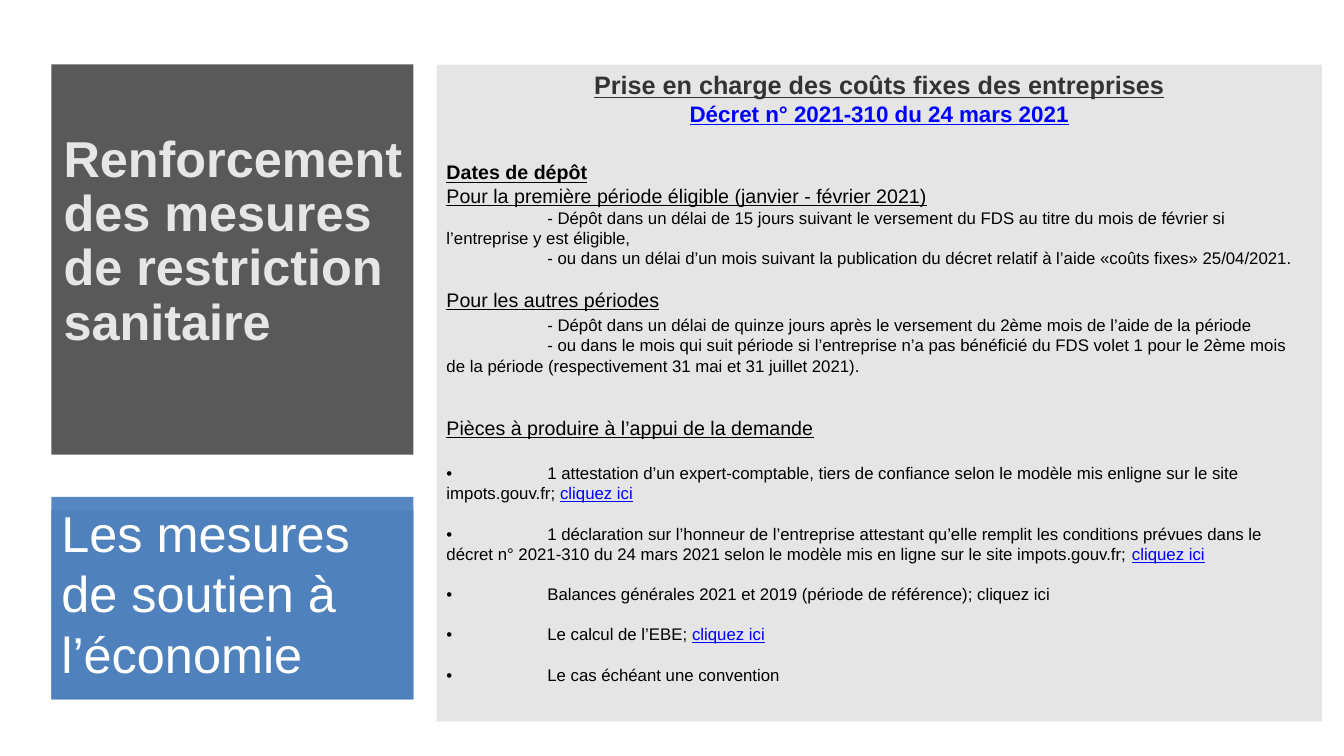
from lxml.etree import SubElement
from pptx import Presentation
from pptx.dml.color import RGBColor
from pptx.enum.shapes import MSO_SHAPE
from pptx.enum.text import MSO_ANCHOR, PP_ALIGN
from pptx.oxml.ns import qn
from pptx.util import Inches, Pt

DARK = RGBColor(0x59, 0x59, 0x59)
PALE = RGBColor(0xE7, 0xE6, 0xE6)
BLUE = RGBColor(0x4F, 0x81, 0xBD)
GREY = RGBColor(0x80, 0x80, 0x80)
WHITE = RGBColor(0xFF, 0xFF, 0xFF)
BLACK = RGBColor(0x00, 0x00, 0x00)
HEADING = RGBColor(0x33, 0x33, 0x33)
LINK = RGBColor(0x00, 0x00, 0xFF)

LEFT_X, LEFT_W = 0.51, 3.59
RIGHT_X, RIGHT_W = 4.33, 8.78
TOP = 0.64
INDENT = Inches(1)

FORMATS = {
    "strong": {"size": Pt(14), "bold": True, "underline": True},
    "head": {"size": Pt(14), "underline": True},
    "dash": {"size": Pt(12)},
    "bullet": {"size": Pt(12)},
}

DETAILS = [
    ("strong", 0, "Dates de dépôt", ""),
    ("head", 0, "Pour la première période éligible (janvier - février 2021)", ""),
    ("dash", 0, "- Dépôt dans un délai de 15 jours suivant le versement du FDS au titre du mois de février si\n"
     "l’entreprise y est éligible,", ""),
    ("dash", 0, "- ou dans un délai d’un mois suivant la publication du décret relatif à l’aide "
     "«coûts fixes» 25/04/2021.", ""),
    ("head", 14.4, "Pour les autres périodes", ""),
    ("dash", 2.4, "- Dépôt dans un délai de quinze jours après le versement du 2ème mois de l’aide de la période", ""),
    ("dash", 0, "- ou dans le mois qui suit période si l’entreprise n’a pas bénéficié du FDS volet 1 pour le 2ème mois\n"
     "de la période (respectivement 31 mai et 31 juillet 2021).", ""),
    ("head", 28.8, "Pièces à produire à l’appui de la demande", ""),
    ("bullet", 16.8, "1 attestation d’un expert-comptable, tiers de confiance selon le modèle mis enligne sur le site\n"
     "impots.gouv.fr; ", "cliquez ici"),
    ("bullet", 14.4, "1 déclaration sur l’honneur de l’entreprise attestant qu’elle remplit les conditions prévues dans le\n"
     "décret n° 2021-310 du 24 mars 2021 selon le modèle mis en ligne sur le site impots.gouv.fr; ", "cliquez ici"),
    ("bullet", 14.4, "Balances générales 2021 et 2019 (période de référence); cliquez ici", ""),
    ("bullet", 14.4, "Le calcul de l’EBE; ", "cliquez ici"),
    ("bullet", 14.4, "Le cas échéant une convention", ""),
]


def add_run(p, text, color, **fmt):
    r = p.add_run()
    r.text = text
    r.font.color.rgb = color
    for name, value in {"name": "Arial", **fmt}.items():
        setattr(r.font, name, value)


def set_frame(tf, anchor=MSO_ANCHOR.TOP, top=0.05, right=0.1):
    values = {"word_wrap": True, "vertical_anchor": anchor,
              "margin_left": Inches(0.1), "margin_right": Inches(right),
              "margin_top": Inches(top), "margin_bottom": Inches(0.05)}
    for name, value in values.items():
        setattr(tf, name, value)


def add_panel(s, box, color, opacity=100):
    sp = s.shapes.add_shape(MSO_SHAPE.RECTANGLE, *map(Inches, box))
    sp.shadow.inherit = False
    sp.fill.solid()
    sp.fill.fore_color.rgb = color
    sp.line.fill.background()
    if opacity < 100:
        clr = sp.fill._xPr.find(qn("a:solidFill"))[0]
        SubElement(clr, qn("a:alpha")).set("val", str(opacity * 1000))
    return sp


def add_title(s, box):
    x, y, w, h = box
    panel = add_panel(s, box, DARK)
    title = s.shapes.title
    panel._element.addnext(title._element)
    place = {"left": x + 0.02, "top": y, "width": w - 0.03, "height": h - 0.34}
    for name, value in place.items():
        setattr(title, name, Inches(value))
    set_frame(title.text_frame, MSO_ANCHOR.MIDDLE, right=0)
    p = title.text_frame.paragraphs[0]
    p.alignment, p.line_spacing = PP_ALIGN.LEFT, 0.9
    add_run(p, "Renforcement des mesures de restriction sanitaire", PALE, size=Pt(36), bold=True)


def add_subject(s, box):
    x, y, w, h = box
    add_panel(s, (x, y + 0.13, w, h - 0.13), BLUE, 95)
    tf = add_panel(s, box, BLUE, 95).text_frame
    set_frame(tf)
    p = tf.paragraphs[0]
    p.alignment = PP_ALIGN.LEFT
    add_run(p, "Les mesures de soutien à l’économie", WHITE, size=Pt(36))


def add_tab_stop(p):
    tabs = SubElement(p._p.get_or_add_pPr(), qn("a:tabLst"))
    tab = SubElement(tabs, qn("a:tab"))
    for name, value in {"pos": str(INDENT), "algn": "l"}.items():
        tab.set(name, value)


def add_details(s, box):
    tf = add_panel(s, box, GREY, 20).text_frame
    set_frame(tf, top=0.95)
    for i, (kind, gap, text, link) in enumerate(DETAILS):
        p = tf.add_paragraph() if i else tf.paragraphs[0]
        p.alignment, p.space_before = PP_ALIGN.LEFT, Pt(gap)
        if kind == "dash":
            p._p.get_or_add_pPr().set("indent", str(INDENT))
        if kind == "bullet":
            add_tab_stop(p)
            text = "•\t" + text
        for n, line in enumerate(text.split("\n")):
            if n:
                p.add_line_break()
            add_run(p, line, BLACK, **FORMATS[kind])
        if link:
            add_run(p, link, LINK, size=Pt(12), underline=True)


def add_heading(s, box):
    tf = s.shapes.add_textbox(*map(Inches, box)).text_frame
    set_frame(tf)
    lines = [("Prise en charge des coûts fixes des entreprises", 18, HEADING),
             ("Décret n° 2021-310 du 24 mars 2021", 16, LINK)]
    for i, (text, size, color) in enumerate(lines):
        p = tf.add_paragraph() if i else tf.paragraphs[0]
        p.alignment = PP_ALIGN.CENTER
        add_run(p, text, color, size=Pt(size), bold=True, underline=True)


def main():
    prs = Presentation()
    prs.slide_width, prs.slide_height = Inches(13.33), Inches(7.5)
    s = prs.slides.add_slide(prs.slide_layouts[5])
    add_title(s, (LEFT_X, TOP, LEFT_W, 3.87))
    add_subject(s, (LEFT_X, 4.93, LEFT_W, 2.01))
    add_details(s, (RIGHT_X, TOP, RIGHT_W, 6.52))
    add_heading(s, (RIGHT_X, TOP, RIGHT_W, 0.66))
    prs.save("out.pptx")


if __name__ == "__main__":
    main()
